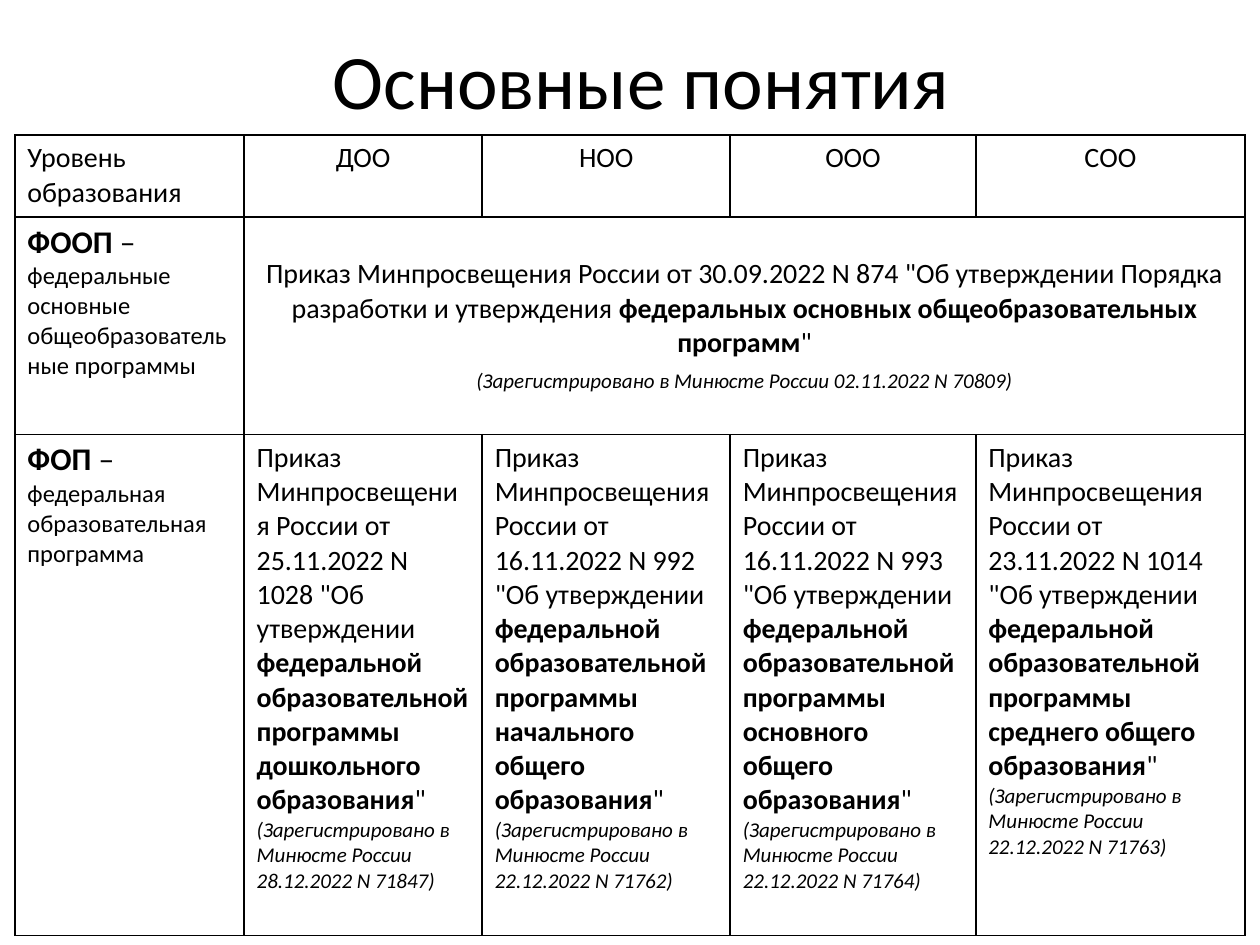
from lxml.etree import SubElement
from pptx import Presentation
from pptx.dml.color import RGBColor
from pptx.enum.text import MSO_ANCHOR, PP_ALIGN
from pptx.oxml.ns import qn
from pptx.util import Cm, Pt

COLORS = {"text": "000000", "border": "000000", "cell": "FFFFFF"}
FONT = "Calibri"
COLUMN_WIDTHS = [4.62, 4.8, 5.0, 4.95, 5.43]
ROW_HEIGHTS = [1.65, 4.39, 10.1]
HEADER_ROW, COMMON_ROW, LEVEL_ROW = range(3)
LEVELS = ["ДОО", "НОО", "ООО", "СОО"]
PROGRAMS = [
    ("ФООП", "федеральные основные общеобразовательные программы"),
    ("ФОП", "федеральная образовательная программа"),
]
# Order date and number, level of education, registration date and number
LEVEL_ORDERS = [
    ("25.11.2022 N 1028", "дошкольного", "28.12.2022 N 71847"),
    ("16.11.2022 N 992", "начального общего", "22.12.2022 N 71762"),
    ("16.11.2022 N 993", "основного общего", "22.12.2022 N 71764"),
    ("23.11.2022 N 1014", "среднего общего", "22.12.2022 N 71763"),
]


def add_text(paragraph, text, size=16, bold=False, italic=False, align=None):
    if align is not None:
        paragraph.alignment = align
    run = paragraph.add_run()
    run.text = text
    run.font.name = FONT
    run.font.size = Pt(size)
    run.font.bold = bold
    run.font.italic = italic
    run.font.color.rgb = RGBColor.from_string(COLORS["text"])


def add_order(paragraph, order, action, subject, ending, align=None):
    add_text(paragraph, f'Приказ Минпросвещения России от {order} "Об {action} ',
             align=align)
    add_text(paragraph, subject, bold=True)
    add_text(paragraph, ending)


def add_registration(paragraph, registration, align=None):
    add_text(paragraph, f"(Зарегистрировано в Минюсте России {registration})",
             size=12, italic=True, align=align)


def style_cell(cell):
    cell.fill.solid()
    cell.fill.fore_color.rgb = RGBColor.from_string(COLORS["cell"])
    properties = cell._tc.get_or_add_tcPr()
    # Border lines must stand before the fill
    for position, side in enumerate(("lnL", "lnR", "lnT", "lnB")):
        line = SubElement(properties, qn(f"a:{side}"), w=str(Pt(1)))
        line_fill = SubElement(line, qn("a:solidFill"))
        SubElement(line_fill, qn("a:srgbClr"), val=COLORS["border"])
        properties.insert(position, line)


def add_title(slide, left, top, width, height):
    text_frame = slide.shapes.add_textbox(left, top, width, height).text_frame
    text_frame.word_wrap = True
    text_frame.vertical_anchor = MSO_ANCHOR.MIDDLE
    add_text(text_frame.paragraphs[0], "Основные понятия", size=44,
             align=PP_ALIGN.CENTER)


def fill_header(table):
    add_text(table.cell(HEADER_ROW, 0).text_frame.paragraphs[0],
             "Уровень образования")
    for column, level in enumerate(LEVELS, start=1):
        add_text(table.cell(HEADER_ROW, column).text_frame.paragraphs[0], level,
                 align=PP_ALIGN.CENTER)


def fill_programs(table):
    for row, (short_name, full_name) in enumerate(PROGRAMS, start=COMMON_ROW):
        text_frame = table.cell(row, 0).text_frame
        heading = text_frame.paragraphs[0]
        add_text(heading, short_name, size=18, bold=True)
        add_text(heading, " –", size=18)
        add_text(text_frame.add_paragraph(), full_name, size=14)


def fill_common_order(table):
    # One order covers all levels, so its cell spans their columns
    cell = table.cell(COMMON_ROW, 1)
    cell.merge(table.cell(COMMON_ROW, len(LEVELS)))
    cell.vertical_anchor = MSO_ANCHOR.MIDDLE
    add_order(cell.text_frame.paragraphs[0], order="30.09.2022 N 874",
              action="утверждении Порядка разработки и утверждения",
              subject="федеральных основных общеобразовательных программ",
              ending='"', align=PP_ALIGN.CENTER)
    registration = cell.text_frame.add_paragraph()
    registration.space_before = Pt(5)
    add_registration(registration, "02.11.2022 N 70809", align=PP_ALIGN.CENTER)


def fill_level_orders(table):
    for column, (order, level, registration) in enumerate(LEVEL_ORDERS, start=1):
        paragraph = table.cell(LEVEL_ROW, column).text_frame.paragraphs[0]
        add_order(paragraph, order=order, action="утверждении",
                  subject=f"федеральной образовательной программы {level} образования",
                  ending='" ')
        add_registration(paragraph, registration)


def add_concepts_table(slide, left, top, width, height):
    table = slide.shapes.add_table(len(ROW_HEIGHTS), len(COLUMN_WIDTHS),
                                   left, top, width, height).table
    # Columns and rows share the given box in proportion
    for column, share in zip(table.columns, COLUMN_WIDTHS):
        column.width = int(width * share / sum(COLUMN_WIDTHS))
    for row, share in zip(table.rows, ROW_HEIGHTS):
        row.height = int(height * share / sum(ROW_HEIGHTS))
    for cell in table.iter_cells():
        style_cell(cell)
    fill_header(table)
    fill_programs(table)
    fill_common_order(table)
    fill_level_orders(table)


def main():
    presentation = Presentation()
    presentation.slide_width = Cm(25.4)
    presentation.slide_height = Cm(19.05)
    slide = presentation.slides.add_slide(presentation.slide_layouts[6])
    add_title(slide, Cm(1.5), Cm(0), Cm(22.86), Cm(3.18))
    add_concepts_table(slide, Cm(0.3), Cm(2.72), Cm(24.8), Cm(16.14))
    presentation.save("out.pptx")


if __name__ == "__main__":
    main()
